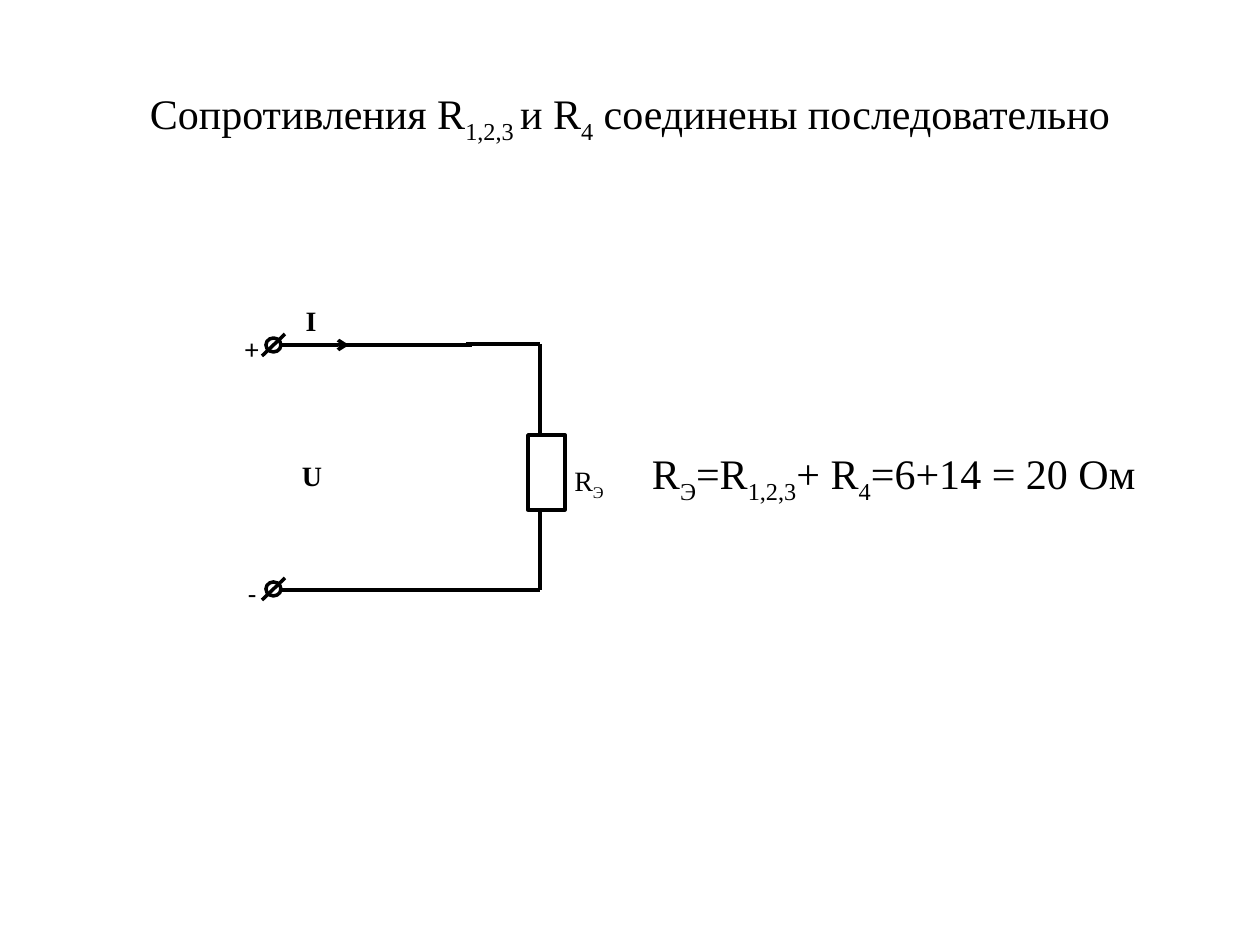
import pptx
import pptx.dml.color
import pptx.enum.shapes
import pptx.enum.text
import pptx.oxml.ns
import pptx.util
from lxml import etree

COLORS = {"ink": "000000", "paper": "FFFFFF"}
SERIF = "Times New Roman"
PX = 914400 / 126
SHAPES = pptx.enum.shapes.MSO_SHAPE
ANCHORS = pptx.enum.text.MSO_ANCHOR
ALIGNMENTS = pptx.enum.text.PP_ALIGN


def emu(*lengths):
    return [pptx.util.Emu(round(length * PX)) for length in lengths]


def color(name):
    return pptx.dml.color.RGBColor.from_string(COLORS[name])


def write(paragraph, text, size=16, font=SERIF, bold=False):
    for index, piece in enumerate(text.split("|")):
        run = paragraph.add_run()
        run.text = piece
        run.font.name = font
        run.font.size = pptx.util.Pt(size)
        run.font.bold = bold
        run.font.color.rgb = color("ink")
        if index % 2:
            run._r.get_or_add_rPr().set("baseline", "-25000")


class CircuitSlide:
    """Draws circuit symbols and labels; text between bars is subscript."""

    def __init__(self, slide, line_width=2):
        self.shapes = slide.shapes
        self.line_width = pptx.util.Pt(line_width)

    def outline(self, line):
        line.color.rgb = color("ink")
        line.width = self.line_width

    def wire(self, start, end, arrow=False):
        connector = self.shapes.add_connector(
            pptx.enum.shapes.MSO_CONNECTOR.STRAIGHT, *emu(*start, *end))
        self.outline(connector.line)
        properties = connector._element.spPr
        etree.SubElement(properties, pptx.oxml.ns.qn("a:effectLst"))
        if arrow:
            line = connector.line._get_or_add_ln()
            etree.SubElement(line, pptx.oxml.ns.qn("a:tailEnd"), type="arrow")

    def symbol(self, kind, box):
        shape = self.shapes.add_shape(kind, *emu(*box))
        shape.shadow.inherit = False
        shape.fill.solid()
        shape.fill.fore_color.rgb = color("paper")
        self.outline(shape.line)

    def label(self, text, box, centered=True, insets=(19, 9), spacing=1.15,
              after=10, anchor=ANCHORS.TOP, **text_format):
        frame = self.shapes.add_textbox(*emu(*box)).text_frame
        frame.word_wrap = True
        frame.vertical_anchor = anchor
        horizontal, vertical = emu(*insets)
        frame.margin_left = frame.margin_right = horizontal
        frame.margin_top = frame.margin_bottom = vertical
        paragraph = frame.paragraphs[0]
        paragraph.alignment = ALIGNMENTS.CENTER if centered else ALIGNMENTS.LEFT
        paragraph.line_spacing = spacing
        paragraph.space_after = pptx.util.Pt(after)
        write(paragraph, text, **text_format)


def main():
    presentation = pptx.Presentation()
    presentation.slide_width, presentation.slide_height = emu(1260, 945)
    circuit = CircuitSlide(presentation.slides.add_slide(presentation.slide_layouts[6]))

    circuit.label("Сопротивления R|1,2,3 |и R|4| соединены последовательно",
                  (63, 38, 1134, 157), insets=(13, 6), spacing=1.0, after=0,
                  anchor=ANCHORS.MIDDLE, size=24)

    segment = 74
    top_wires = [(275, 345), (346, 345), (398, 345), (466, 344)]
    bottom_wires = [(x, 590) for x in (275, 349, 399, 466)]
    for x, y in top_wires + bottom_wires:
        circuit.wire((x, y), (x + segment, y), arrow=(x, y) == top_wires[0])
    circuit.wire((540, 344), (540, 590))
    circuit.symbol(SHAPES.RECTANGLE, (528, 435, 37, 75))

    for y in (345, 589):
        circuit.symbol(SHAPES.FLOWCHART_CONNECTOR, (266, y - 7, 15, 14))
        circuit.wire((285, y - 11), (262, y + 11))

    circuit.label("+", (226, 318, 49, 49), centered=False, font="Calibri")
    circuit.label("-", (229, 563, 91, 86), centered=False, font="Calibri")
    circuit.label("I", (251, 290, 120, 54), bold=True)
    circuit.label("U", (252, 445, 120, 54), bold=True)
    circuit.label("R|Э", (530, 449, 118, 67))
    circuit.label("R|Э|=R|1,2,3|+ R|4|=6+14 = 20 Ом", (639, 433, 586, 305),
                  centered=False, insets=(13, 6), size=24)
    presentation.save("out.pptx")


if __name__ == "__main__":
    main()
